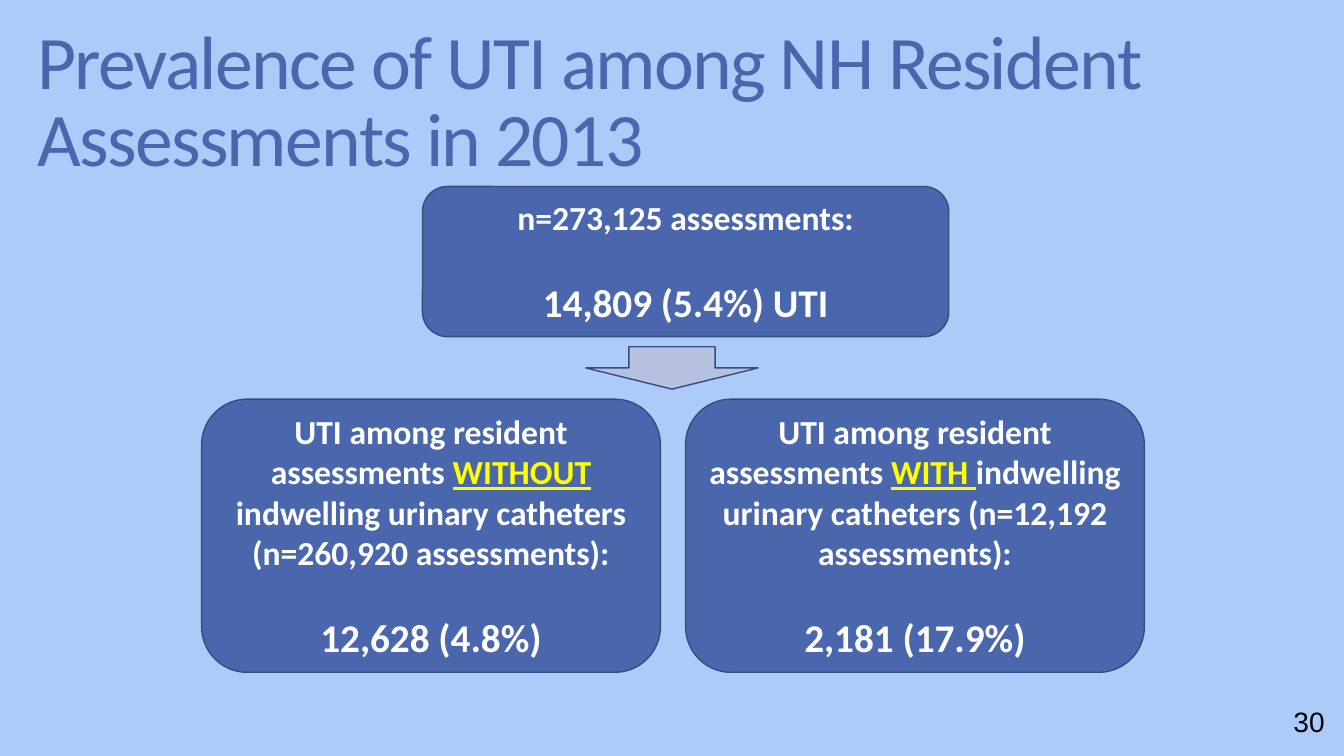
from dataclasses import dataclass
from pptx import Presentation
from pptx.dml.color import RGBColor as RGB
from pptx.enum.shapes import MSO_SHAPE as Kind
from pptx.enum.text import MSO_ANCHOR as Anchor, MSO_AUTO_SIZE as Fit, PP_ALIGN as Align
from pptx.util import Inches, Pt


@dataclass(frozen=True)
class Theme:
    sky: RGB = RGB.from_string("ACCBF9")
    blue: RGB = RGB.from_string("4A66AC")
    edge: RGB = RGB.from_string("374B7F")
    pale: RGB = RGB.from_string("B5C1DF")
    white: RGB = RGB.from_string("FFFFFF")
    black: RGB = RGB.from_string("000000")
    yellow: RGB = RGB.from_string("FFFF00")
    font: str = "Calibri"
    plain: str = "Arial"
    head: Pt = Pt(54)
    count: Pt = Pt(28)
    label: Pt = Pt(24)
    page: Pt = Pt(20)
    gap: Pt = Pt(29.3)


theme = Theme()


def add_shape(kind, box, fill):
    shape = slide.shapes.add_shape(kind, *map(Inches, box))
    shape.shadow.inherit = False
    shape.fill.solid()
    shape.fill.fore_color.rgb = fill
    shape.line.color.rgb = theme.edge
    shape.line.width = Pt(1)
    return shape


def style(font, name, size, color):
    font.name = name
    font.size = size
    font.color.rgb = color


deck = Presentation()
deck.slide_width, deck.slide_height = Inches(13.33), Inches(7.5)
slide = deck.slides.add_slide(deck.slide_layouts[5])
slide.background.fill.solid()
slide.background.fill.fore_color.rgb = theme.sky

title = slide.shapes.title
title.left, title.top = Inches(0.27), Inches(0.14)
title.width, title.height = Inches(11.78), Inches(1.81)
frame = title.text_frame
frame.text = "Prevalence of UTI among NH Resident Assessments in 2013"
frame.auto_size = Fit.NONE
frame.vertical_anchor = Anchor.MIDDLE
para = frame.paragraphs[0]
para.alignment = Align.LEFT
para.line_spacing = 0.85
style(para.font, theme.font, theme.head, theme.blue)
para.runs[0].font._element.set("spc", "-120")

lead = "UTI among resident assessments "
tail = "indwelling urinary catheters (n={} assessments):"
cards = [
    ((4.19, 1.85, 5.22, 1.49), ["n=273,125 assessments:"], "14,809 (5.4%) UTI"),
    ((2, 3.96, 4.55, 2.71), [lead, "WITHOUT ", tail.format("260,920")], "12,628 (4.8%)"),
    ((6.8, 3.96, 4.55, 2.71), [lead, "WITH ", tail.format("12,192")], "2,181 (17.9%)"),
]
for box, parts, count in cards:
    frame = add_shape(Kind.ROUNDED_RECTANGLE, box, theme.blue).text_frame
    frame.word_wrap = True
    frame.vertical_anchor = Anchor.MIDDLE
    label, total = frame.paragraphs[0], frame.add_paragraph()
    for part in parts:
        label.add_run().text = part
    total.text = count
    total.space_before = theme.gap
    for para, size in (label, theme.label), (total, theme.count):
        para.alignment = Align.CENTER
        para.font.bold = True
        style(para.font, theme.font, size, theme.white)
    for run in label.runs[1:2]:
        run.font.color.rgb = theme.yellow
        run.font.underline = True

add_shape(Kind.DOWN_ARROW, (5.81, 3.44, 1.71, 0.42), theme.pale)

page = slide.shapes.add_textbox(*map(Inches, (12.73, 6.94, 0.51, 0.44)))
frame = page.text_frame
frame.text = "30"
frame.word_wrap = False
frame.auto_size = Fit.SHAPE_TO_FIT_TEXT
style(frame.paragraphs[0].font, theme.plain, theme.page, theme.black)

deck.save("out.pptx")
